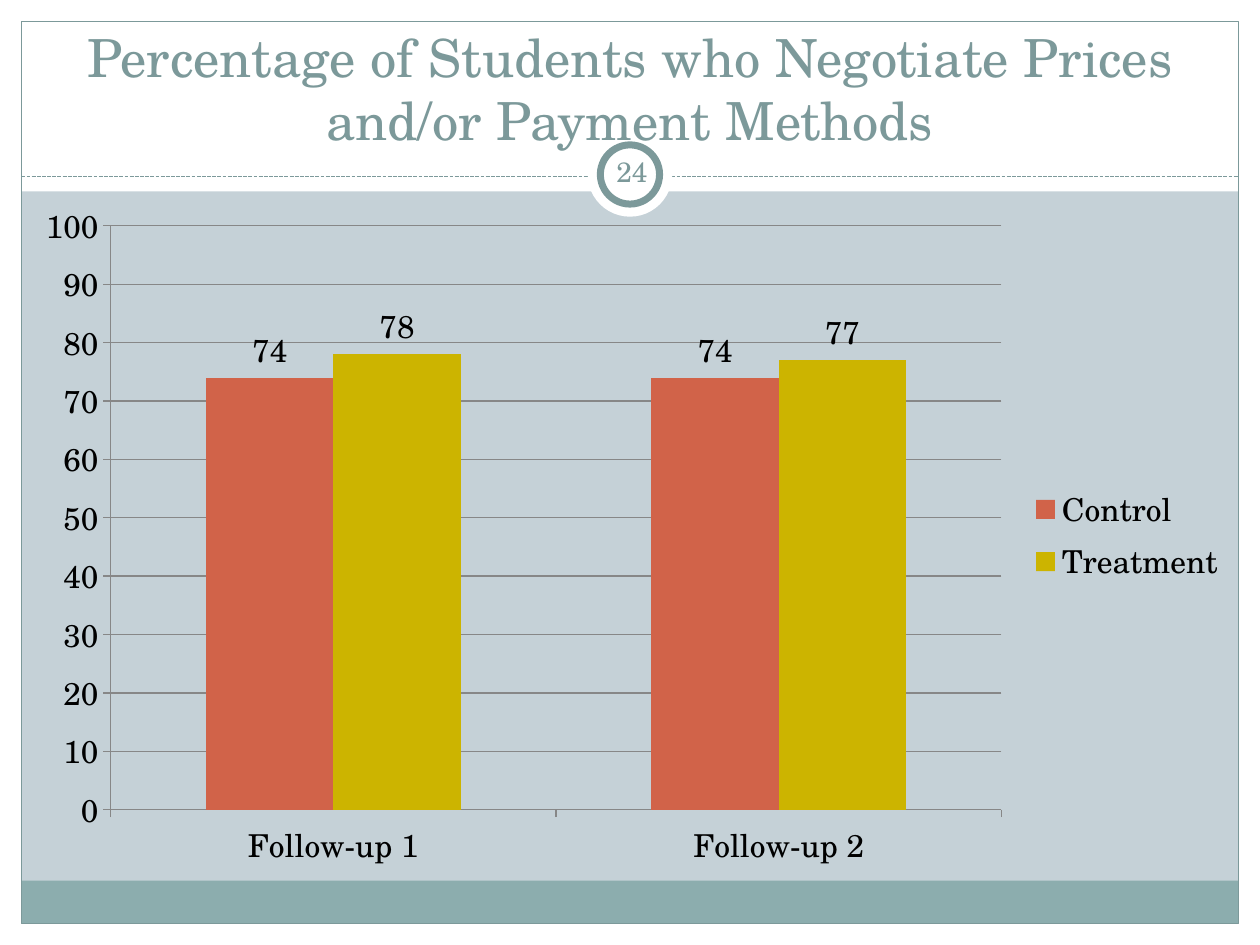
import pptx
import pptx.chart.data
import pptx.dml.color
import pptx.enum.chart
import pptx.enum.dml
import pptx.enum.shapes
import pptx.enum.text
import pptx.oxml
import pptx.util

WIDTH, HEIGHT = 10, 7.5
MARGIN = 0.17
HEADER = 1.52
FONT = "TeX Gyre Schola"
TEAL, WHITE, GRID = "7C999A", "FFFFFF", "878787"
SHAPES = pptx.enum.shapes.MSO_SHAPE


def colour(value):
    return pptx.dml.color.RGBColor.from_string(value)


def inches(box):
    return [pptx.util.Inches(length) for length in box]


def set_line(line, value, width):
    line.color.rgb = colour(value)
    line.width = pptx.util.Pt(width)


def add_panel(page, kind, box, fill=None, outline=None, width=0.75):
    panel = page.shapes.add_shape(kind, *inches(box))
    panel.shadow.inherit = False
    if fill:
        panel.fill.solid()
        panel.fill.fore_color.rgb = colour(fill)
    else:
        panel.fill.background()
    if outline:
        set_line(panel.line, outline, width)
    else:
        panel.line.fill.background()


def write_text(shape, text, size, anchor, inset):
    frame = shape.text_frame
    frame.word_wrap = True
    frame.auto_size = pptx.enum.text.MSO_AUTO_SIZE.NONE
    frame.vertical_anchor = anchor
    frame.margin_left = frame.margin_right = pptx.util.Inches(inset)
    frame.margin_top = frame.margin_bottom = pptx.util.Inches(0.05)
    para = frame.paragraphs[0]
    para.alignment = pptx.enum.text.PP_ALIGN.CENTER
    span = para.add_run()
    span.text = text
    span.font.size = pptx.util.Pt(size)
    span.font.name = FONT
    span.font.bold = False
    span.font.color.rgb = colour(TEAL)


def draw_frame(page, box):
    left, top, width, height = box
    right, bottom = left + width, top + height
    borders = [
        (left, bottom - MARGIN, width, MARGIN),
        (left, top, width, HEADER),
        (left, top, MARGIN, height),
        (right - MARGIN, top, MARGIN, height),
    ]
    for border in borders:
        add_panel(page, SHAPES.RECTANGLE, border, WHITE)
    inner = width - 2 * MARGIN
    footer = 2 * MARGIN
    add_panel(page, SHAPES.RECTANGLE,
              (left + MARGIN, bottom - MARGIN - footer, inner, footer), "8CADAE")
    add_panel(page, SHAPES.RECTANGLE,
              (left + MARGIN, top + MARGIN, inner, height - 2 * MARGIN), outline=TEAL)
    level = top + 1.4
    rule = page.shapes.add_connector(
        pptx.enum.shapes.MSO_CONNECTOR.STRAIGHT,
        *inches((left + MARGIN, level, right - MARGIN, level)))
    set_line(rule.line, TEAL, 0.75)
    rule.line.dash_style = pptx.enum.dml.MSO_LINE.SQUARE_DOT
    rule.element.spPr.append(pptx.oxml.parse_xml(
        '<a:effectLst xmlns:a="http://schemas.openxmlformats.org/drawingml/2006/main"/>'))


def draw_badge(page, box, number):
    left, top, size, _ = box
    ring = 0.1
    add_panel(page, SHAPES.OVAL, box, WHITE)
    add_panel(page, SHAPES.OVAL,
              (left + ring, top + ring, size - 2 * ring, size - 2 * ring), WHITE, TEAL, 4)
    label = page.shapes.add_textbox(*inches((left + ring, top + 0.07, 0.5, 0.48)))
    write_text(label, number, 16, pptx.enum.text.MSO_ANCHOR.MIDDLE, 0.05)


def place_title(page, box, text):
    title = page.shapes.title
    title.left, title.top, title.width, title.height = inches(box)
    write_text(title, text, 30, pptx.enum.text.MSO_ANCHOR.BOTTOM, 0.1)
    title.element.getparent().append(title.element)


def draw_chart(page, box):
    data = pptx.chart.data.CategoryChartData()
    data.categories = ["Follow-up 1", "Follow-up 2"]
    data.add_series("Control", (74, 74))
    data.add_series("Treatment", (78, 77))
    chart = page.shapes.add_chart(
        pptx.enum.chart.XL_CHART_TYPE.COLUMN_CLUSTERED, *inches(box), data).chart
    chart.font.size = pptx.util.Pt(18)
    chart.font.name = FONT
    chart.font.color.rgb = colour("000000")
    chart.has_title = False
    chart.has_legend = True
    chart.legend.position = pptx.enum.chart.XL_LEGEND_POSITION.RIGHT
    chart.legend.include_in_layout = False

    for axis in (chart.category_axis, chart.value_axis):
        axis.major_tick_mark = pptx.enum.chart.XL_TICK_MARK.OUTSIDE
        axis.minor_tick_mark = pptx.enum.chart.XL_TICK_MARK.NONE
        set_line(axis.format.line, GRID, 0.75)
    scale = chart.value_axis
    scale.minimum_scale, scale.maximum_scale, scale.major_unit = 0, 100, 10
    scale.has_major_gridlines = True
    set_line(scale.major_gridlines.format.line, GRID, 0.75)
    scale.tick_labels.number_format = "#,##0"
    scale.tick_labels.number_format_is_linked = False

    plot = chart.plots[0]
    plot.gap_width = 150
    plot.overlap = 0
    plot.vary_by_categories = False
    for series, fill in zip(plot.series, ("D16349", "CCB400")):
        series.format.fill.solid()
        series.format.fill.fore_color.rgb = colour(fill)
        labels = series.data_labels
        labels.show_value = True
        labels.number_format = "0"
        labels.number_format_is_linked = False
        labels.position = pptx.enum.chart.XL_LABEL_POSITION.OUTSIDE_END


def main():
    deck = pptx.Presentation()
    deck.slide_width, deck.slide_height = inches((WIDTH, HEIGHT))
    page = deck.slides.add_slide(deck.slide_layouts.get_by_name("Title Only"))
    page.background.fill.solid()
    page.background.fill.fore_color.rgb = colour("C5D1D7")
    badge = 0.67
    draw_frame(page, (0, 0, WIDTH, HEIGHT))
    draw_badge(page, ((WIDTH - badge) / 2, 0.14 * HEIGHT, badge, badge), "24")
    place_title(page, (0, 0.33, WIDTH, 0.92),
                "Percentage of Students who Negotiate Prices and/or Payment Methods")
    draw_chart(page, (MARGIN, 0.2 * HEIGHT, WIDTH - 2 * MARGIN, 5.5))
    deck.save("out.pptx")


if __name__ == "__main__":
    main()
